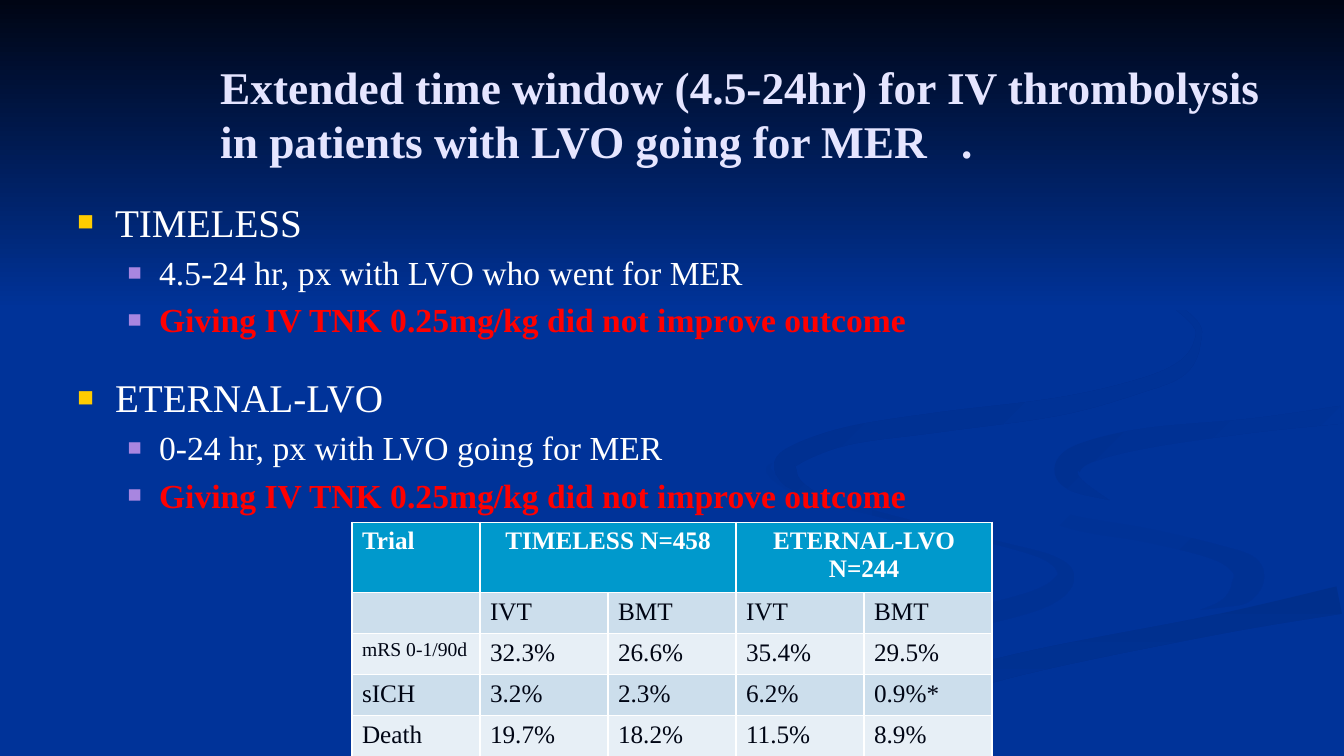
import math

import pptx
import pptx.util
import pptx.dml.color
import pptx.enum.shapes
import pptx.enum.text
import pptx.oxml.ns
from lxml import etree

Cm = pptx.util.Cm
Pt = pptx.util.Pt
RGBColor = pptx.dml.color.RGBColor

FONT = "Times New Roman"
BLUE = RGBColor(0x00, 0x33, 0x99)
NIGHT = RGBColor(0x00, 0x05, 0x14)
SHADE = RGBColor(0x00, 0x31, 0x93)
DARK_SHADE = RGBColor(0x00, 0x2F, 0x8C)
MID_SHADE = RGBColor(0x00, 0x30, 0x91)
LOOP_SHADE = RGBColor(0x00, 0x2F, 0x8E)
LAVENDER = RGBColor(0xE5, 0xE5, 0xFF)
WHITE = RGBColor(0xFF, 0xFF, 0xFF)
RED = RGBColor(0xFF, 0x00, 0x00)
GOLD = RGBColor(0xFF, 0xCC, 0x00)
PURPLE = RGBColor(0xA8, 0x86, 0xE0)
HEADER = RGBColor(0x00, 0x99, 0xCC)
BANDS = (RGBColor(0xCC, 0xDE, 0xEC), RGBColor(0xE7, 0xEF, 0xF6))

RIGHTWARD, DIAGONAL, DOWNWARD = 0, 315, 270
CURVE_STEPS = 8

# Each knot is (x, y, thickness) in centimetres along the ribbon's centre line.
LEFT_RIBBON = [
    (19.46, 11.66, 0), (19.4, 11.9, 0.15), (20.05, 12.37, 0.15),
    (21.35, 12.75, 0.15), (23.1, 13.2, 0.1), (25.4, 13.75, 0.1),
    (26.5, 14.1, 0.2), (26.85, 14.55, 0.45), (26.3, 15.05, 0.5),
    (24.75, 15.5, 0.5), (22.85, 15.87, 0.5), (19.1, 16.6, 0.55),
    (15.5, 17.5, 0.7), (11.9, 18.65, 0.8)]
RIGHT_BEND = [
    (24.51, 11.79, 0), (24.75, 12.3, 0.1), (25.65, 12.75, 0.2),
    (27.2, 13.2, 0.35), (28.95, 13.5, 0.35), (30.75, 13.95, 0.4),
    (31.45, 14.4, 0.75), (31.3, 14.9, 0.65), (30.85, 15.2, 0.2),
    (30.25, 15.37, 0)]
LOWER_RIBBON = [
    (17.9, 18.8, 0.3), (21.35, 17.95, 0.6), (25.65, 16.75, 0.55),
    (30.6, 15.75, 0.5), (33.75, 15.12, 0.7)]
RIGHT_EDGE = [
    (27.95, 12.6, 0), (27.1, 12.2, 0.4), (26.9, 11.8, 0.65),
    (27.4, 11.4, 0.55), (28.95, 11.03, 0.5), (31.6, 10.72, 0.36),
    (33.8, 10.45, 0.45)]
UPPER_LOOP = [
    (25.83, 5.92, 0), (28.55, 7.05, 0.12), (30.03, 8.05, 0.15),
    (30.17, 8.65, 0.17), (29.75, 9.3, 0.35), (28.65, 9.75, 0.35),
    (26.65, 10.25, 0.45), (23.6, 10.65, 0.5), (21.3, 11, 0.45),
    (19.9, 11.55, 0.5), (19.85, 11.95, 0.5), (20.2, 12.3, 0.25),
    (21.05, 12.7, 0)]
RIBBONS = [
    (LEFT_RIBBON, BLUE, SHADE, RIGHTWARD),
    (RIGHT_BEND, BLUE, SHADE, DIAGONAL),
    (LOWER_RIBBON, DARK_SHADE, BLUE, DOWNWARD),
    (RIGHT_EDGE, MID_SHADE, BLUE, DIAGONAL),
    (UPPER_LOOP, LOOP_SHADE, BLUE, DIAGONAL)]

TITLE = "Extended time window (4.5-24hr) for IV thrombolysis in patients with LVO going for MER\t."
NO_GAIN = "Giving IV TNK 0.25mg/kg did not improve outcome"
TRIALS = [
    ("TIMELESS", "4.5-24 hr, px with LVO who went for MER"),
    ("ETERNAL-LVO", "0-24 hr, px with LVO going for MER")]
RESULTS = [
    ["Trial", "TIMELESS N=458", "", "ETERNAL-LVO N=244", ""],
    ["", "IVT", "BMT", "IVT", "BMT"],
    ["mRS 0-1/90d", "32.3%", "26.6%", "35.4%", "29.5%"],
    ["sICH", "3.2%", "2.3%", "6.2%", "0.9%*"],
    ["Death", "19.7%", "18.2%", "11.5%", "8.9%"]]


def add_run(p, text, size, color, bold=False):
    r = p.add_run()
    r.text = text
    r.font.name = FONT
    r.font.size = Pt(size)
    r.font.bold = bold
    r.font.color.rgb = color


def add_text_frame(s, box):
    tf = s.shapes.add_textbox(*box).text_frame
    tf.word_wrap = True
    return tf


def add_element(parent, tag, **attrs):
    return etree.SubElement(parent, pptx.oxml.ns.qn(tag), attrs)


def paint_gradient(sp, start, end, angle):
    sp.shadow.inherit = False
    sp.line.fill.background()
    sp.fill.gradient()
    sp.fill.gradient_angle = angle
    for stop, color in zip(sp.fill.gradient_stops, (start, end)):
        stop.color.rgb = color


def spline(a, b, c, d, t):
    return b + t / 2 * (c - a + t * (2 * a - 5 * b + 4 * c - d
                                     + t * (3 * (b - c) + d - a)))


def smooth(knots):
    padded = [knots[0], *knots, knots[-1]]
    curve = [tuple(spline(*values, step / CURVE_STEPS)
                   for values in zip(*padded[i:i + 4]))
             for i in range(len(knots) - 1) for step in range(CURVE_STEPS)]
    return curve + [knots[-1]]


def ribbon_outline(knots):
    curve = smooth(knots)
    one_side, other_side = [], []
    for i, (x, y, thickness) in enumerate(curve):
        before, after = curve[max(i - 1, 0)], curve[min(i + 1, len(curve) - 1)]
        direction = math.atan2(after[1] - before[1], after[0] - before[0])
        dx = -math.sin(direction) * thickness / 2
        dy = math.cos(direction) * thickness / 2
        one_side.append((Cm(x + dx), Cm(y + dy)))
        other_side.append((Cm(x - dx), Cm(y - dy)))
    return one_side + other_side[::-1]


def draw_backdrop(s, left, top, width, height):
    s.background.fill.solid()
    s.background.fill.fore_color.rgb = BLUE
    for knots, start, end, angle in RIBBONS:
        points = ribbon_outline(knots)
        outline = s.shapes.build_freeform(*points[0])
        outline.add_line_segments(points[1:], close=True)
        paint_gradient(outline.convert_to_shape(left, top), start, end, angle)
    sky = s.shapes.add_shape(pptx.enum.shapes.MSO_SHAPE.RECTANGLE,
                             left, top, width, int(height * 0.41))
    paint_gradient(sky, NIGHT, BLUE, DOWNWARD)


def draw_title(s, *box):
    tf = add_text_frame(s, box)
    tf.vertical_anchor = pptx.enum.text.MSO_ANCHOR.MIDDLE
    p = tf.paragraphs[0]
    tabs = add_element(p._p.get_or_add_pPr(), "a:tabLst")
    add_element(tabs, "a:tab", pos=str(Cm(18.67)), algn="l")
    add_run(p, TITLE, 32.4, LAVENDER, True)


def set_bullet(p, margin, indent, color):
    pPr = p._p.get_or_add_pPr()
    pPr.set("marL", str(Cm(margin)))
    pPr.set("indent", str(Cm(-indent)))
    add_element(add_element(pPr, "a:buClr"), "a:srgbClr", val=str(color))
    add_element(pPr, "a:buSzPct", val="70000")
    add_element(pPr, "a:buFont", typeface=FONT)
    add_element(pPr, "a:buChar", char="■")


def draw_trials(s, *box):
    tf = add_text_frame(s, box)
    for i, (name, window) in enumerate(TRIALS):
        p = tf.add_paragraph() if i else tf.paragraphs[0]
        set_bullet(p, 0.95, 0.95, GOLD)
        if i:
            p.space_before = Pt(24.5)
        add_run(p, name, 28, WHITE)
        for text, color, bold in ((window, WHITE, False), (NO_GAIN, RED, True)):
            p = tf.add_paragraph()
            p.level = 1
            set_bullet(p, 2.06, 0.79, PURPLE)
            p.space_before = Pt(4.8)
            add_run(p, text, 24, color, bold)


def draw_results(s, left, top, width, height):
    rows, cols = len(RESULTS), len(RESULTS[0])
    table = s.shapes.add_table(rows, cols, left, top, width, height).table
    for first in (1, 3):
        table.cell(0, first).merge(table.cell(0, first + 1))
    for i, values in enumerate(RESULTS):
        for j, text in enumerate(values):
            cell = table.cell(i, j)
            cell.fill.solid()
            cell.fill.fore_color.rgb = BANDS[(i - 1) % 2] if i else HEADER
            if text:
                p = cell.text_frame.paragraphs[0]
                if i == 0 and j:
                    p.alignment = pptx.enum.text.PP_ALIGN.CENTER
                add_run(p, text, 14 if text.startswith("mRS") else 18,
                        NIGHT if i else WHITE, i == 0)


def main():
    prs = pptx.Presentation()
    prs.slide_width, prs.slide_height = Cm(33.87), Cm(19.05)
    s = prs.slides.add_slide(prs.slide_layouts[6])
    draw_backdrop(s, 0, 0, prs.slide_width, prs.slide_height)
    draw_title(s, Cm(5.3), Cm(1.02), Cm(27.71), Cm(3.68))
    draw_trials(s, Cm(1.7), Cm(4.87), Cm(30.48), Cm(14.1))
    draw_results(s, Cm(8.87), Cm(13.16), Cm(16.13), Cm(5.15))
    prs.save("out.pptx")


if __name__ == "__main__":
    main()
